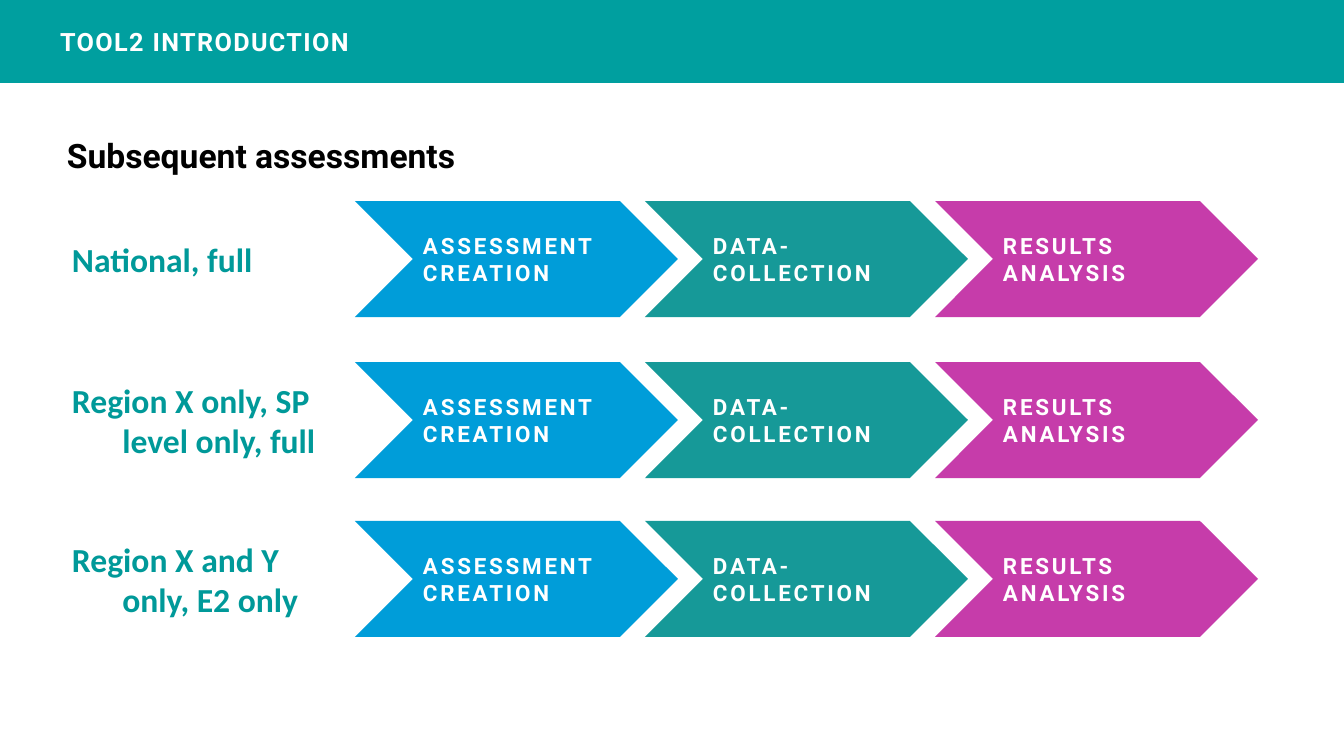
"""Build the slide of subsequent assessments: three rows of three process steps."""
from pptx import Presentation, util as u
from pptx.dml.color import RGBColor
from pptx.enum import shapes, text

PX = 12192000 / 1344


def px(n):
    return u.Emu(round(n * PX))


def write(sp, content, font, size, color, insets, spacing=0):
    tf = sp.text_frame
    tf.word_wrap = True
    tf.vertical_anchor = text.MSO_ANCHOR.MIDDLE
    tf.margin_left, tf.margin_top, tf.margin_right, tf.margin_bottom = map(px, insets)
    p = tf.paragraphs[0]
    p.alignment = text.PP_ALIGN.LEFT
    r = p.add_run()
    r.text = content
    p.font.name, p.font.size, p.font.bold = font, u.Pt(size), True
    p.font.color.rgb = RGBColor.from_string(color)
    if spacing:
        r.font._element.set("spc", str(spacing * 100))
    return p


prs = Presentation()
prs.slide_width, prs.slide_height = px(1344), px(756)
s = prs.slides.add_slide(prs.slide_layouts[6])

boxes = [
    (shapes.MSO_SHAPE.RECTANGLE, (0, 0, 1344, 83), "009F9F",
     "TOOL2 INTRODUCTION", 18, (60, 5, 10, 5), 1),
]
steps = [
    ("ASSESSMENT CREATION", "009DD9"),
    ("DATA-COLLECTION", "169998"),
    ("RESULTS ANALYSIS", "C63CAA"),
]
rows = [
    (201, "National, full"),
    (362, "Region X only, SP level only, full"),
    (521, "Region X and Y only, E2 only"),
]
for top, label in rows:
    for i, (step, fill) in enumerate(steps):
        boxes.append((shapes.MSO_SHAPE.CHEVRON, (355 + 290 * i, top, 323, 116),
                      fill, step, 16, (10, 5, 10, 5), 2))

for kind, area, fill, content, size, insets, spacing in boxes:
    sp = s.shapes.add_shape(kind, *map(px, area))
    sp.shadow.inherit = False
    sp.fill.solid()
    sp.fill.fore_color.rgb = RGBColor.from_string(fill)
    sp.line.fill.background()
    write(sp, content, "Roboto", size, "FFFFFF", insets, spacing)

title = s.shapes.add_textbox(px(67), px(83), px(1210), px(144))
write(title, "Subsequent assessments", "Roboto", 24, "000000", (0, 0, 0, 0))

for top, label in rows:
    sp = s.shapes.add_textbox(px(67), px(top), px(288), px(116))
    p = write(sp, label, "Calibri", 24, "009999", (5, 5, 5, 5))
    p.space_before = u.Pt(6.7)
    pPr = p._p.get_or_add_pPr()
    pPr.set("marL", str(u.Inches(0.5)))
    pPr.set("indent", str(-u.Inches(0.5)))

prs.save("out.pptx")
